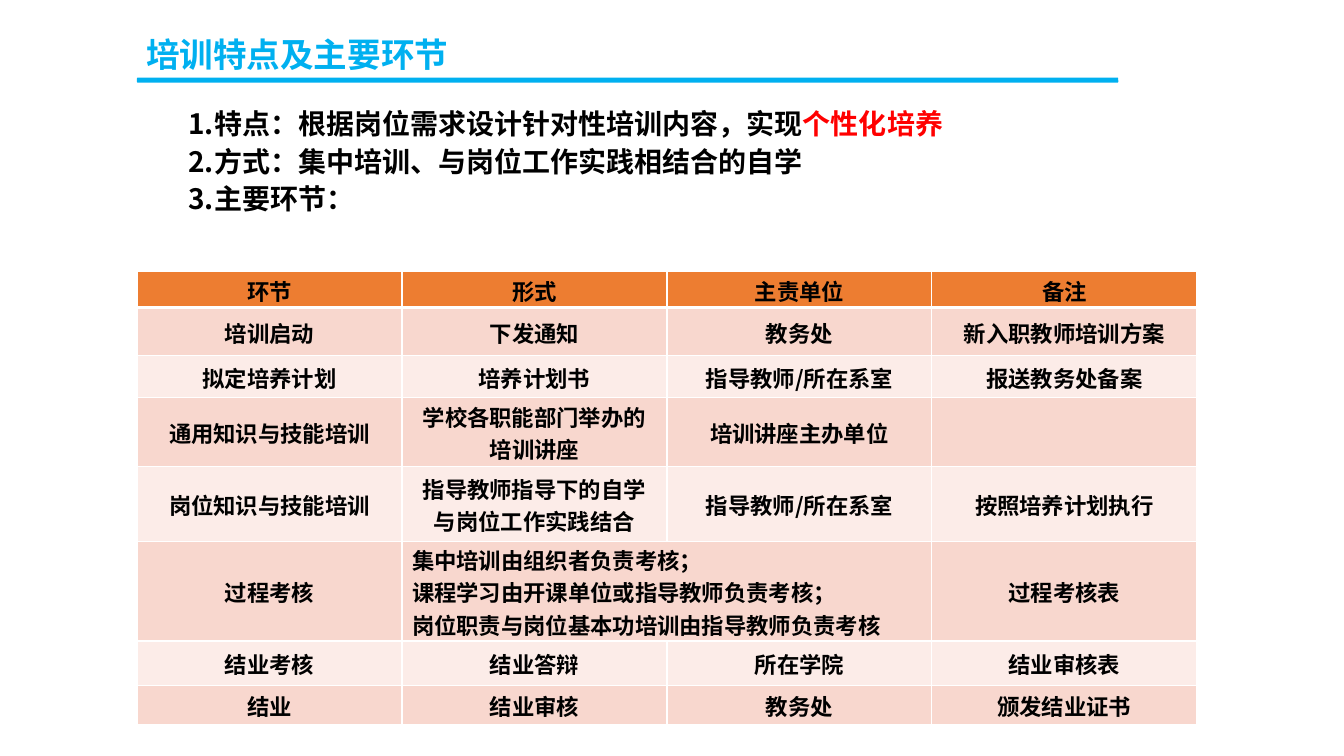
import pptx
import pptx.dml.color
import pptx.enum.shapes
import pptx.enum.text
import pptx.oxml
import pptx.oxml.ns
import pptx.util
from pptx.dml.color import RGBColor
from pptx.util import Inches

BLUE = RGBColor(0x00, 0xB0, 0xF0)
BLACK = RGBColor(0x00, 0x00, 0x00)
RED = RGBColor(0xFF, 0x00, 0x00)
ORANGE = RGBColor(0xED, 0x7D, 0x31)
DARK_BAND = RGBColor(0xF8, 0xD7, 0xCE)
LIGHT_BAND = RGBColor(0xFC, 0xEC, 0xE8)
WHITE = RGBColor(0xFF, 0xFF, 0xFF)

POINTS = [
    [("1.特点：根据岗位需求设计针对性培训内容，实现", BLACK), ("个性化培养", RED)],
    [("2.方式：集中培训、与岗位工作实践相结合的自学", BLACK)],
    [("3.主要环节：", BLACK)],
]
ASSESSMENT = [
    "集中培训由组织者负责考核；",
    "课程学习由开课单位或指导教师负责考核；",
    "岗位职责与岗位基本功培训由指导教师负责考核",
]
STAGES = [
    ["环节", "形式", "主责单位", "备注"],
    ["培训启动", "下发通知", "教务处", "新入职教师培训方案"],
    ["拟定培养计划", "培养计划书", "指导教师/所在系室", "报送教务处备案"],
    ["通用知识与技能培训", "学校各职能部门举办的培训讲座", "培训讲座主办单位", ""],
    ["岗位知识与技能培训", "指导教师指导下的自学与岗位工作实践结合",
     "指导教师/所在系室", "按照培养计划执行"],
    ["过程考核", ASSESSMENT, None, "过程考核表"],
    ["结业考核", "结业答辩", "所在学院", "结业审核表"],
    ["结业", "结业审核", "教务处", "颁发结业证书"],
]
ROW_HEIGHTS = [0.36, 0.48, 0.41, 0.69, 0.74, 0.99, 0.44, 0.39]
COLUMN_WIDTH = 2.63


class TrainingSlide:
    font = "Noto Sans CJK SC"

    def __init__(self, deck):
        self.slide = deck.slides.add_slide(deck.slide_layouts[1])

    def add_run(self, paragraph, text, size, color):
        run = paragraph.add_run()
        run.text = text
        run.font.size = pptx.util.Pt(size)
        run.font.bold = True
        run.font.name = self.font
        run.font.color.rgb = color
        properties = run.font._element
        east_asian = pptx.oxml.ns.qn("a:ea")
        properties.find(pptx.oxml.ns.qn("a:latin")).addnext(
            properties.makeelement(east_asian, {"typeface": self.font}))

    def place(self, placeholder, left, top, width, height):
        placeholder.left, placeholder.top = Inches(left), Inches(top)
        placeholder.width, placeholder.height = Inches(width), Inches(height)
        frame = placeholder.text_frame
        frame.auto_size = pptx.enum.text.MSO_AUTO_SIZE.NONE
        frame.margin_top = frame.margin_bottom = 0
        return frame

    def title(self, text):
        frame = self.place(self.slide.shapes.title, 1.35, 0.29, 3.23, 0.5)
        frame.word_wrap = False
        frame.vertical_anchor = pptx.enum.text.MSO_ANCHOR.MIDDLE
        heading = frame.paragraphs[0]
        heading.alignment = pptx.enum.text.PP_ALIGN.LEFT
        self.add_run(heading, text, 24, BLUE)

    def underline(self):
        rule = self.slide.shapes.add_shape(
            pptx.enum.shapes.MSO_SHAPE.ROUNDED_RECTANGLE,
            Inches(1.36), Inches(0.77), Inches(9.74), Inches(0.05))
        rule.shadow.inherit = False
        rule.fill.solid()
        rule.fill.fore_color.rgb = BLUE
        rule.line.fill.background()

    def points(self, points):
        frame = self.place(self.slide.placeholders[1], 1.77, 1.09, 7.8, 1.34)
        frame.vertical_anchor = pptx.enum.text.MSO_ANCHOR.TOP
        for index, runs in enumerate(points):
            point = frame.add_paragraph() if index else frame.paragraphs[0]
            point.line_spacing = 0.9
            point.space_before = pptx.util.Pt(5.5 if index else 0)
            properties = point._p.get_or_add_pPr()
            properties.set("marL", "0")
            properties.set("indent", "0")
            properties.append(properties.makeelement(pptx.oxml.ns.qn("a:buNone"), {}))
            for text, color in runs:
                self.add_run(point, text, 20, color)

    def border(self, cell, bottom_width):
        """Draw white lines round a cell, with its own bottom width in points."""
        properties = cell._tc.get_or_add_tcPr()
        widths = {"lnL": 1, "lnR": 1, "lnT": 1, "lnB": bottom_width}
        for position, (side, width) in enumerate(widths.items()):
            properties.insert(position, pptx.oxml.parse_xml(
                f'<a:{side} {pptx.oxml.ns.nsdecls("a")} w="{pptx.util.Pt(width)}">'
                f'<a:solidFill><a:srgbClr val="{WHITE}"/></a:solidFill></a:{side}>'))

    def cell(self, cell, content, fill, bottom_width):
        cell.fill.solid()
        cell.fill.fore_color.rgb = fill
        self.border(cell, bottom_width)
        cell.margin_top, cell.margin_bottom = Inches(0.02), 0
        cell.vertical_anchor = pptx.enum.text.MSO_ANCHOR.MIDDLE
        if not content:
            return
        align = pptx.enum.text.PP_ALIGN
        listed = isinstance(content, list)
        for index, text in enumerate(content if listed else [content]):
            frame = cell.text_frame
            line = frame.add_paragraph() if index else frame.paragraphs[0]
            line.alignment = align.LEFT if listed else align.CENTER
            self.add_run(line, text, 16, BLACK)

    def table(self, stages):
        columns = len(stages[0])
        table = self.slide.shapes.add_table(
            len(stages), columns, Inches(1.36), Inches(2.69),
            Inches(COLUMN_WIDTH * columns), Inches(sum(ROW_HEIGHTS))).table
        for column in table.columns:
            column.width = Inches(COLUMN_WIDTH)
        for row, stage in enumerate(stages):
            table.rows[row].height = Inches(ROW_HEIGHTS[row])
            band = DARK_BAND if row % 2 else LIGHT_BAND
            for column, content in enumerate(stage):
                self.cell(table.cell(row, column), content,
                          band if row else ORANGE, 1 if row else 3)
                if content is None:
                    table.cell(row, column - 1).merge(table.cell(row, column))


def main():
    deck = pptx.Presentation()
    deck.slide_width, deck.slide_height = Inches(13.34), Inches(7.5)
    training = TrainingSlide(deck)
    training.title("培训特点及主要环节")
    training.underline()
    training.points(POINTS)
    training.table(STAGES)
    deck.save("out.pptx")


if __name__ == "__main__":
    main()
